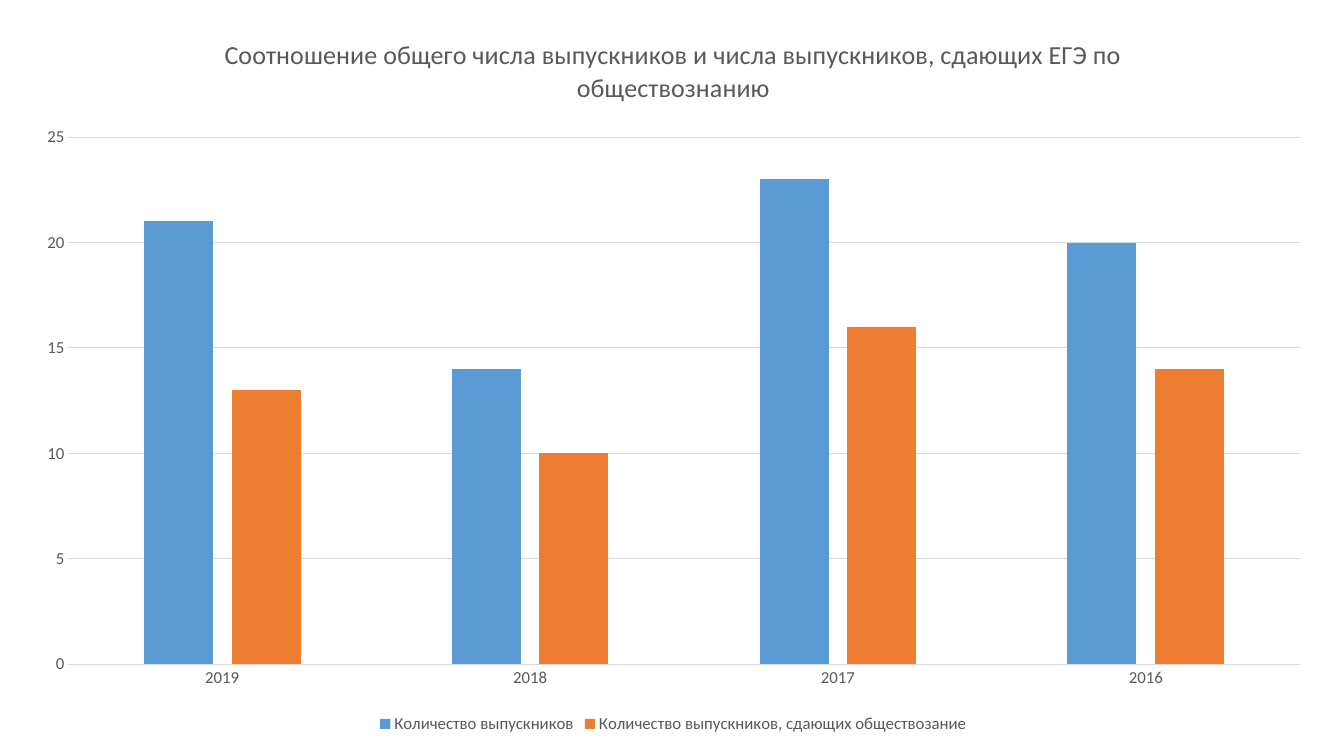
from dataclasses import dataclass

from pptx import Presentation
from pptx.chart.data import CategoryChartData
from pptx.dml.color import RGBColor
from pptx.enum.chart import XL_CHART_TYPE, XL_LEGEND_POSITION, XL_TICK_MARK
from pptx.util import Inches, Pt

CLUSTERED = XL_CHART_TYPE.COLUMN_CLUSTERED
LEGEND_BOTTOM = XL_LEGEND_POSITION.BOTTOM
NO_TICK = XL_TICK_MARK.NONE


@dataclass(frozen=True)
class Theme:
    font: str = "Calibri"
    text: str = "595959"
    line: str = "D9D9D9"
    background: str = "FFFFFF"
    title_size: float = 18.6
    label_size: float = 12
    line_width: float = 0.75


@dataclass(frozen=True)
class Series:
    name: str
    values: tuple[int, ...]
    color: str


THEME = Theme()
TITLE = "Соотношение общего числа выпускников и числа выпускников, сдающих ЕГЭ по обществознанию"
YEARS = ("2019", "2018", "2017", "2016")
GRADUATES = (
    Series("Количество выпускников", (21, 14, 23, 20), "5B9BD5"),
    Series("Количество выпускников, сдающих обществозание", (13, 10, 16, 14), "ED7D31"),
)


def format_font(font, size: float = THEME.label_size, color: str = THEME.text) -> None:
    font.name = THEME.font
    font.size = Pt(size)
    font.bold = False
    font.color.rgb = RGBColor.from_string(color)


def write_text(text_frame, text: str, **text_format) -> None:
    paragraph = text_frame.paragraphs[0]
    run = paragraph.add_run()
    run.text = text
    format_font(run.font, **text_format)


def format_line(line) -> None:
    line.color.rgb = RGBColor.from_string(THEME.line)
    line.width = Pt(THEME.line_width)


def format_axes(chart) -> None:
    for axis in (chart.category_axis, chart.value_axis):
        axis.major_tick_mark = NO_TICK
        axis.minor_tick_mark = NO_TICK
        format_font(axis.tick_labels.font)
    format_line(chart.category_axis.format.line)
    value_axis = chart.value_axis
    value_axis.minimum_scale = 0
    value_axis.maximum_scale = 25
    value_axis.major_unit = 5
    value_axis.format.line.fill.background()
    value_axis.has_major_gridlines = True
    format_line(value_axis.major_gridlines.format.line)


def format_columns(chart) -> None:
    plot = chart.plots[0]
    plot.vary_by_categories = False
    plot.gap_width = 219
    plot.overlap = -27
    for column, series in zip(plot.series, GRADUATES):
        column.format.fill.solid()
        column.format.fill.fore_color.rgb = RGBColor.from_string(series.color)


def add_graduates_chart(slide) -> None:
    data = CategoryChartData()
    data.categories = YEARS
    for series in GRADUATES:
        data.add_series(series.name, series.values)
    chart = slide.shapes.add_chart(
        CLUSTERED, Inches(0.21), Inches(0.12), Inches(12.94), Inches(7.2), data
    ).chart
    format_font(chart.font)
    chart.has_title = True
    write_text(chart.chart_title.text_frame, TITLE, size=THEME.title_size)
    chart.chart_title.include_in_layout = False
    chart.has_legend = True
    chart.legend.position = LEGEND_BOTTOM
    chart.legend.include_in_layout = False
    format_font(chart.legend.font)
    format_axes(chart)
    format_columns(chart)


def main() -> None:
    presentation = Presentation()
    presentation.slide_width = Inches(13.33)
    presentation.slide_height = Inches(7.5)
    slide = presentation.slides.add_slide(presentation.slide_layouts[6])
    slide.background.fill.solid()
    slide.background.fill.fore_color.rgb = RGBColor.from_string(THEME.background)
    add_graduates_chart(slide)
    presentation.save("out.pptx")


if __name__ == "__main__":
    main()
